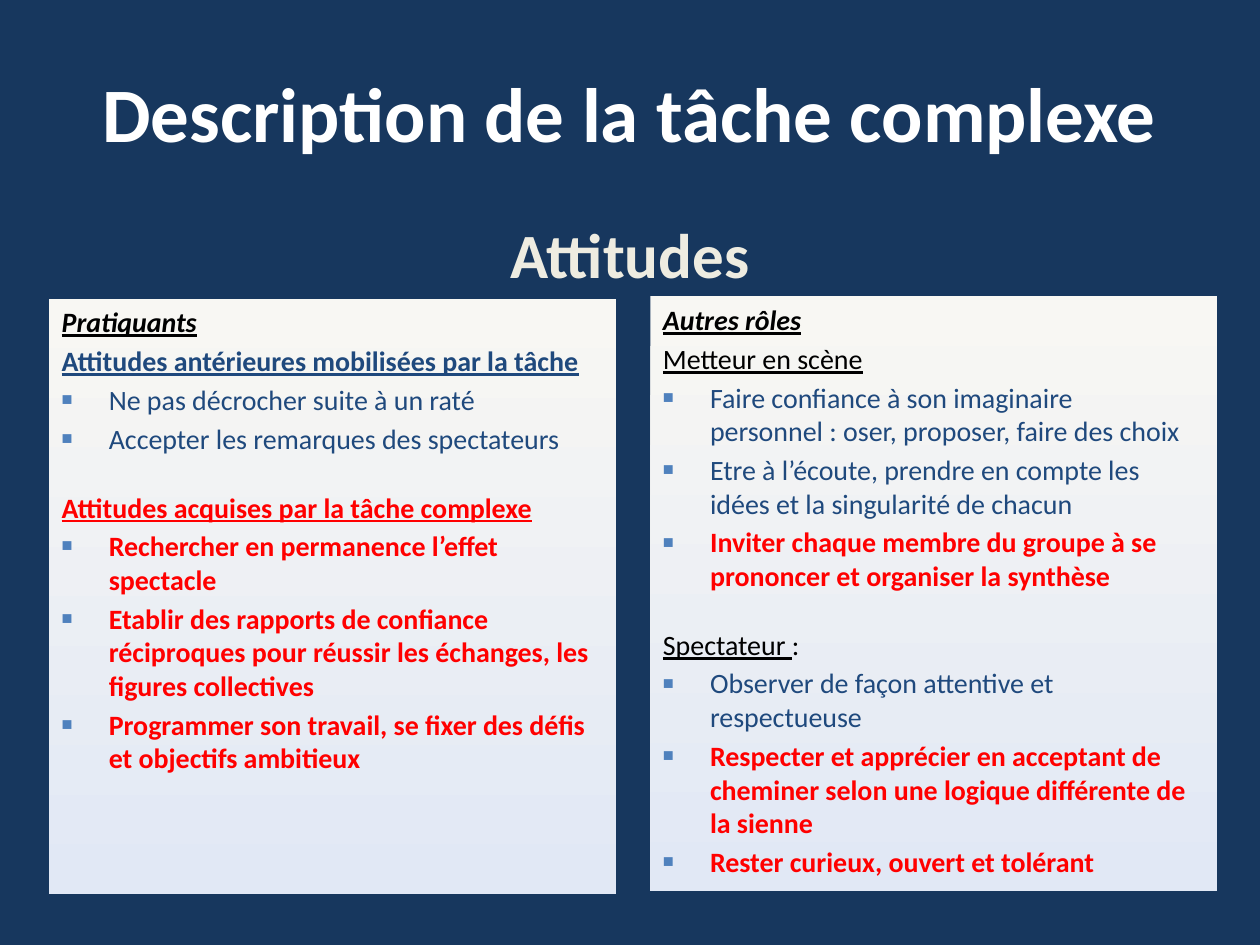
import pptx
import pptx.util
import pptx.dml.color
import pptx.enum.text
import pptx.oxml
import pptx.oxml.ns
from pptx.util import Cm

FONT = "Calibri"
BLACK, BLUE, RED = "000000", "1F497D", "FF0000"
BULLET_TAGS = (
    '<a:buClr {ns}><a:srgbClr val="4F81BD"/></a:buClr>',
    '<a:buSzPct {ns} val="65000"/>',
    '<a:buFont {ns} typeface="Arial"/>',
    '<a:buChar {ns} char="■"/>',
)
NO_BULLET_TAGS = ("<a:buNone {ns}/>",)


def color(value):
    return pptx.dml.color.RGBColor.from_string(value)


def format_paragraph(para, size, tint, bold=False, bullet=False, before=0):
    """Set bullet, indent, spacing and font of one paragraph."""
    properties = para._p.get_or_add_pPr()
    indent = Cm(0.95) if bullet else 0
    properties.set("marL", str(indent))
    properties.set("indent", str(-indent))
    for tag in BULLET_TAGS if bullet else NO_BULLET_TAGS:
        namespace = pptx.oxml.ns.nsdecls("a")
        properties.append(pptx.oxml.parse_xml(tag.format(ns=namespace)))
    para.space_before = pptx.util.Pt(before)
    para.font.name = FONT
    para.font.size = pptx.util.Pt(size)
    para.font.bold = bold
    para.font.color.rgb = color(tint)


deck = pptx.Presentation()
deck.slide_width, deck.slide_height = Cm(25.4), Cm(19.05)
page = deck.slides.add_slide(deck.slide_layouts.get_by_name("Comparison"))
page.background.fill.solid()
page.background.fill.fore_color.rgb = color("17375E")
title, subtitle, left_column, spare, right_column = page.placeholders
spare.element.getparent().remove(spare.element)

# Title and subtitle
headings = [
    (title, "Description de la tâche complexe", 0.66, 3.18, 44, "FFFFFF", "MIDDLE"),
    (subtitle, "Attitudes", 4.22, 1.4, 36, "EEECE1", "TOP"),
]
for box, text, top, height, size, tint, anchor in headings:
    box.left, box.top, box.width, box.height = Cm(1.27), Cm(top), Cm(22.86), Cm(height)
    frame = box.text_frame
    frame.text = text
    frame.auto_size = pptx.enum.text.MSO_AUTO_SIZE.NONE
    frame.vertical_anchor = pptx.enum.text.MSO_ANCHOR[anchor]
    format_paragraph(frame.paragraphs[0], size, tint, bold=True)
    frame.paragraphs[0].alignment = pptx.enum.text.PP_ALIGN.CENTER

# Column contents: kind, colour, bold, text (underlined part, plain part for headings)
practitioners = [
    ("title", BLACK, True, "Pratiquants"),
    ("heading", BLUE, True, "Attitudes antérieures mobilisées par la tâche"),
    ("item", BLUE, False, "Ne pas décrocher suite à un raté"),
    ("item", BLUE, False, "Accepter les remarques des spectateurs"),
    ("section", RED, True, "Attitudes acquises par la tâche complexe"),
    ("item", RED, True, "Rechercher en permanence l’effet spectacle"),
    ("item", RED, True, "Etablir des rapports de confiance réciproques pour réussir "
                        "les échanges, les figures collectives"),
    ("item", RED, True, "Programmer son travail, se fixer des défis et objectifs ambitieux"),
]
other_roles = [
    ("title", BLACK, True, "Autres rôles"),
    ("heading", BLACK, False, "Metteur en scène"),
    ("item", BLUE, False, "Faire confiance à son imaginaire personnel : oser, proposer, "
                          "faire des choix"),
    ("item", BLUE, False, "Etre à l’écoute, prendre en compte les idées et la singularité "
                          "de chacun"),
    ("item", RED, True, "Inviter chaque membre du groupe à se prononcer et organiser "
                        "la synthèse"),
    ("section", BLACK, False, "Spectateur :"),
    ("item", BLUE, False, "Observer de façon attentive et respectueuse"),
    ("item", RED, True, "Respecter et apprécier en acceptant de cheminer selon une "
                        "logique différente de la sienne"),
    ("item", RED, True, "Rester curieux, ouvert et tolérant"),
]
space_before = {"title": 0, "heading": 3, "item": 3, "section": 20}

# Two columns on a vertical gradient
columns = [
    (left_column, 0.99, 6.02, practitioners),
    (right_column, 13.11, 5.97, other_roles),
]
for box, left, top, lines in columns:
    box.left, box.top, box.width, box.height = Cm(left), Cm(top), Cm(11.43), Cm(12)
    box.fill.gradient()
    box.fill.gradient_angle = 270
    for stop, position, tint in zip(box.fill.gradient_stops, (0, 1), ("F8F7F3", "E1E8F5")):
        stop.position = position
        stop.color.rgb = color(tint)

    frame = box.text_frame
    frame.auto_size = pptx.enum.text.MSO_AUTO_SIZE.NONE
    frame.vertical_anchor = pptx.enum.text.MSO_ANCHOR.TOP
    for number, (kind, tint, bold, text) in enumerate(lines):
        para = frame.add_paragraph() if number else frame.paragraphs[0]
        format_paragraph(para, 16, tint, bold, kind == "item", space_before[kind])
        para.font.italic = kind == "title"
        # The colon closing a heading is not underlined
        label, colon, _ = text.partition(":") if kind != "item" else (text, "", "")
        span = para.add_run()
        span.text = label
        span.font.underline = kind != "item"
        if colon:
            para.add_run().text = colon

deck.save("out.pptx")
